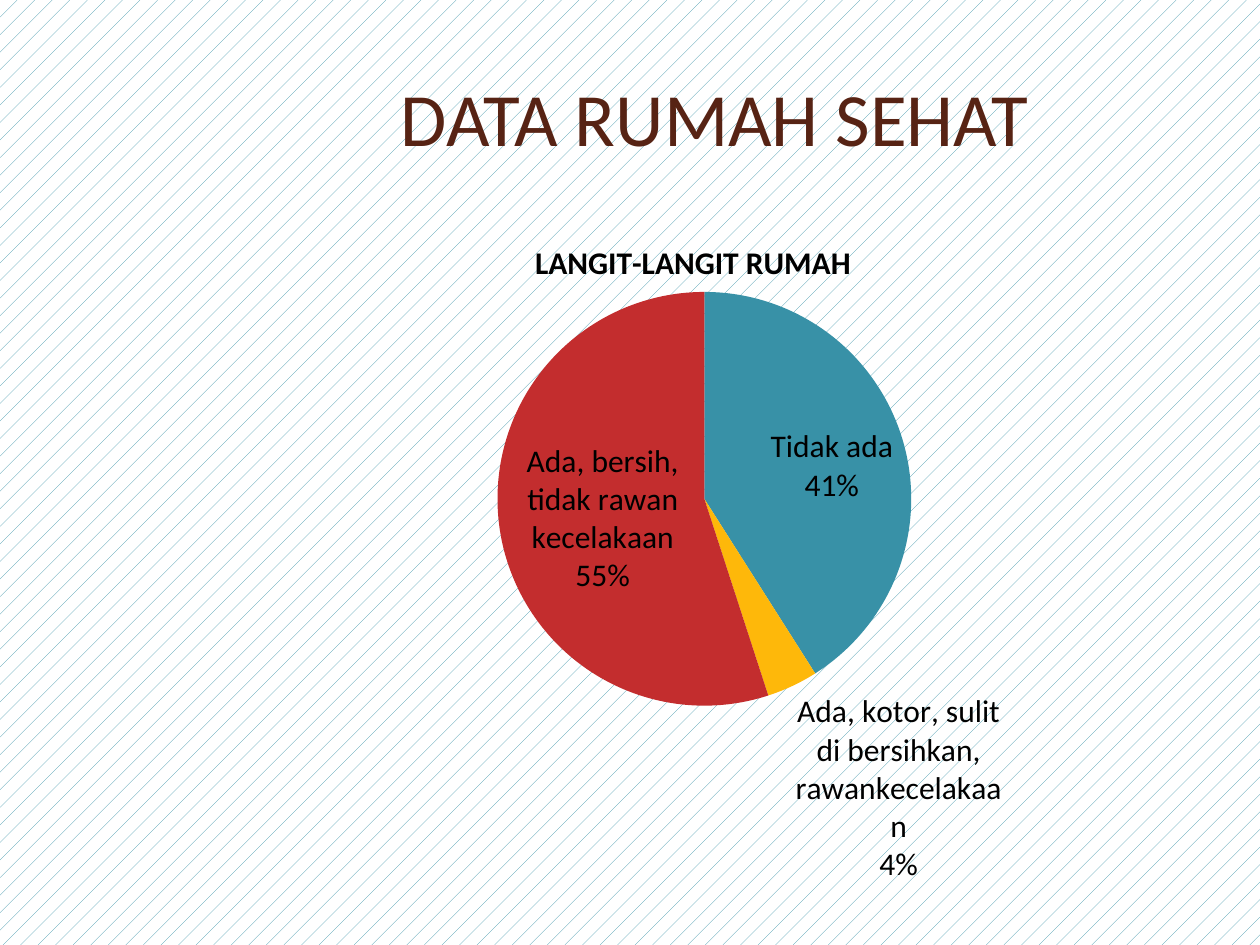
import pptx
import pptx.util
import pptx.chart.data
import pptx.dml.color
import pptx.enum.chart
import pptx.enum.dml
import pptx.enum.text
import pptx.oxml
import pptx.oxml.ns

THEME = {
    "font": "Calibri",
    "title": "572314", "text": "000000", "back": "FFFFFF",
    "slices": ["3891A7", "FEB80A", "C32D2E"],
    "size": {"title": 43, "chart": 10, "label": 18},
}
PX = 914400 / 126


def px(*nums):
    return [round(n * PX) for n in nums]


def style(font, size, color, **more):
    form = {"name": THEME["font"], "size": pptx.util.Pt(THEME["size"][size]), **more}
    for key, val in form.items():
        setattr(font, key, val)
    font.color.rgb = rgb(THEME[color])


rgb = pptx.dml.color.RGBColor.from_string
deck = pptx.Presentation()
deck.slide_width, deck.slide_height = px(1260, 945)
slide = deck.slides.add_slide(deck.slide_layouts[5])

# Patterned background
back = slide.background.fill
back.patterned()
back.pattern = pptx.enum.dml.MSO_PATTERN.PERCENT_5
back.fore_color.rgb = rgb(THEME["slices"][0])
back.back_color.rgb = rgb(THEME["back"])

# Slide title
title = slide.shapes.title
for key, val in zip(("left", "top", "width", "height"), px(198, 38, 1033, 157)):
    setattr(title, key, val)
title.text_frame.vertical_anchor = pptx.enum.text.MSO_ANCHOR.MIDDLE
para = title.text_frame.paragraphs[0]
para.alignment = pptx.enum.text.PP_ALIGN.CENTER
run = para.add_run()
run.text = "DATA RUMAH SEHAT"
style(run.font, "title", "title")

# Pie chart
data = pptx.chart.data.CategoryChartData()
data.categories = [
    "Tidak ada",
    "Ada, kotor, sulit di bersihkan, rawankecelakaan",
    "Ada, bersih, tidak rawan kecelakaan",
]
data.add_series("Series 1", [41, 4, 55])
kind = pptx.enum.chart.XL_CHART_TYPE.PIE
chart = slide.shapes.add_chart(kind, *px(158, 199, 1061, 714), data).chart
style(chart.font, "chart", "text")
chart.has_legend = False
chart.has_title = True
head = chart.chart_title.text_frame
head.text = "LANGIT-LANGIT RUMAH"
style(head.paragraphs[0].runs[0].font, "label", "text", bold=True)

plot = chart.plots[0]
plot.vary_by_categories = True
for spot, color in enumerate(THEME["slices"]):
    part = plot.series[0].points[spot].format
    part.fill.solid()
    part.fill.fore_color.rgb = rgb(color)
    part.line.fill.background()

# Slice labels, with the percentage on its own line
plot.has_data_labels = True
labels = plot.data_labels
style(labels.font, "label", "text")
form = {
    "show_category_name": True, "show_percentage": True, "show_value": False,
    "number_format": "0%", "number_format_is_linked": False,
    "position": pptx.enum.chart.XL_LABEL_POSITION.BEST_FIT,
}
for key, val in form.items():
    setattr(labels, key, val)
qn = pptx.oxml.ns.qn
root = chart.element
flags = root.find(".//" + qn("c:dLbls"))
space = pptx.oxml.ns.nsdecls("c")
break_xml = pptx.oxml.parse_xml(f"<c:separator {space}>\n</c:separator>")
last = flags.find(qn("c:showBubbleSize"))
if last is None:
    last = flags.find(qn("c:showPercent"))
last.addnext(break_xml)

# Fixed places for the chart title and the pie, as shares of the chart
places = {
    "c:title": {"xMode": "edge", "yMode": "edge", "x": 0.35, "y": 0.05},
    "c:plotArea": {"layoutTarget": "inner", "xMode": "edge", "yMode": "edge",
                   "x": 0.32, "y": 0.13, "w": 0.39, "h": 0.58},
}
for tag, rules in places.items():
    area = root.find(".//" + qn(tag))
    old = area.find(qn("c:layout"))
    if old is not None:
        area.remove(old)
    body = "".join(f'<c:{key} val="{val}"/>' for key, val in rules.items())
    layout = pptx.oxml.parse_xml(
        f"<c:layout {space}><c:manualLayout>{body}</c:manualLayout></c:layout>")
    area.insert(1 if tag == "c:title" else 0, layout)

deck.save("out.pptx")
